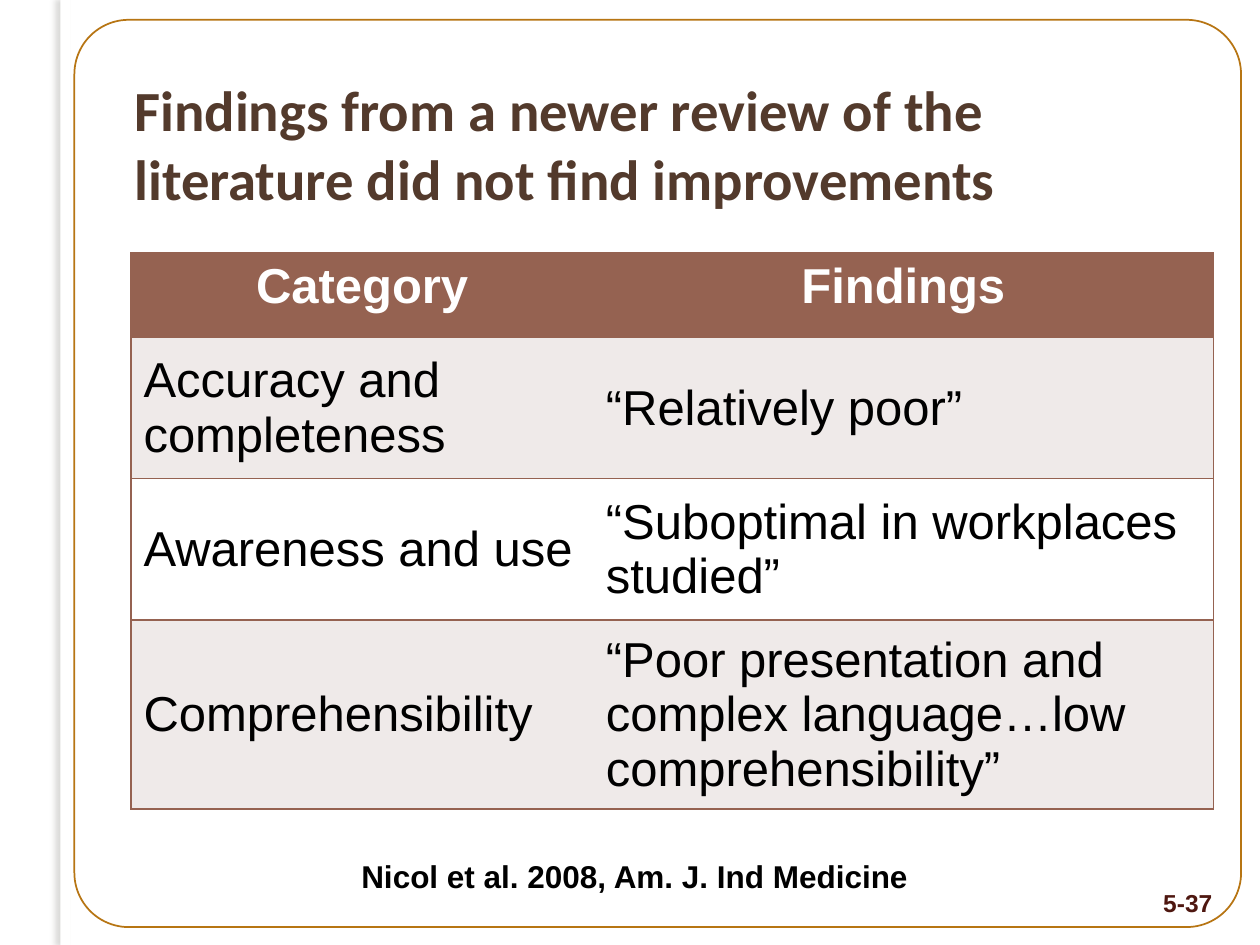
import pptx
import pptx.dml.color
import pptx.enum.shapes
import pptx.enum.text
import pptx.oxml
import pptx.oxml.ns
import pptx.util
from lxml import etree

Cm = pptx.util.Cm
Pt = pptx.util.Pt
RGBColor = pptx.dml.color.RGBColor
ALIGN = pptx.enum.text.PP_ALIGN
ANCHOR = pptx.enum.text.MSO_ANCHOR
SHAPE = pptx.enum.shapes.MSO_SHAPE
qn = pptx.oxml.ns.qn

WHITE = RGBColor(0xFF, 0xFF, 0xFF)
BLACK = RGBColor(0, 0, 0)
GOLD = RGBColor(0xB7, 0x75, 0x13)
BROWN = RGBColor(0x53, 0x3A, 0x2C)
MAROON = RGBColor(0x4E, 0x17, 0x10)
RUST = RGBColor(0x95, 0x62, 0x51)
PALE = RGBColor(0xEF, 0xEA, 0xE9)
SHADOW = RGBColor(0x74, 0x72, 0x6D)

FINDINGS = [
    ("Category", "Findings"),
    ("Accuracy and completeness", "“Relatively poor”"),
    ("Awareness and use", "“Suboptimal in workplaces studied”"),
    ("Comprehensibility", "“Poor presentation and complex language…low comprehensibility”"),
]


def write_text(frame, text, size=28, font="Arial", color=BLACK, bold=False, align=ALIGN.LEFT):
    """Fill a text frame with one formatted paragraph."""
    paragraph = frame.paragraphs[0]
    paragraph.alignment = align
    run = paragraph.add_run()
    run.text = text
    run.font.size = Pt(size)
    run.font.name = font
    run.font.bold = bold
    run.font.color.rgb = color


class SlideBuilder:
    """Holds the current slide and the style of its elements."""

    border_width = Pt(1)

    def __init__(self, slide):
        self.slide = slide

    def shape(self, kind, left, top, width, height, fill=None, line=None):
        shape = self.slide.shapes.add_shape(kind, Cm(left), Cm(top), Cm(width), Cm(height))
        shape.shadow.inherit = False
        if fill is None:
            shape.fill.background()
        else:
            shape.fill.solid()
            shape.fill.fore_color.rgb = fill
        if line is None:
            shape.line.fill.background()
        else:
            shape.line.color.rgb = line
            shape.line.width = self.border_width
        return shape

    def outer_shadow(self, shape, color, blur, distance, angle, opacity):
        effects = shape._element.spPr.find(qn("a:effectLst"))
        shadow = etree.SubElement(
            effects, qn("a:outerShdw"), blurRad=str(Pt(blur)), dist=str(Pt(distance)),
            dir=str(angle * 60000), rotWithShape="0")
        fill = etree.SubElement(shadow, qn("a:srgbClr"), val=str(color))
        etree.SubElement(fill, qn("a:alpha"), val=str(opacity * 1000))

    def text(self, text, left, top, width, height, anchor=ANCHOR.TOP, **style):
        box = self.slide.shapes.add_textbox(Cm(left), Cm(top), Cm(width), Cm(height))
        box.text_frame.word_wrap = True
        box.text_frame.vertical_anchor = anchor
        write_text(box.text_frame, text, **style)

    def borders(self, cell, visible):
        properties = cell._tc.get_or_add_tcPr()
        for side in "LRTB":
            line = etree.SubElement(properties, qn("a:ln" + side), w=str(self.border_width))
            if side in visible:
                fill = etree.SubElement(line, qn("a:solidFill"))
                etree.SubElement(fill, qn("a:srgbClr"), val=str(RUST))
            else:
                etree.SubElement(line, qn("a:noFill"))

    def table(self, rows, left, top, widths, heights):
        table = self.slide.shapes.add_table(
            len(rows), len(widths), Cm(left), Cm(top), Cm(sum(widths)), Cm(sum(heights))).table
        for column, width in zip(table.columns, widths):
            column.width = Cm(width)
        for row_index, (texts, height) in enumerate(zip(rows, heights)):
            table.rows[row_index].height = Cm(height)
            header = row_index == 0
            fill = RUST if header else (PALE if row_index % 2 else WHITE)
            for column_index, text in enumerate(texts):
                cell = table.cell(row_index, column_index)
                self.borders(cell, "LTB" if column_index == 0 else "RTB")
                cell.fill.solid()
                cell.fill.fore_color.rgb = fill
                cell.vertical_anchor = ANCHOR.TOP if header else ANCHOR.MIDDLE
                write_text(cell.text_frame, text, bold=header,
                           color=WHITE if header else BLACK,
                           align=ALIGN.CENTER if header else ALIGN.LEFT)


def main():
    presentation = pptx.Presentation()
    presentation.slide_width = Cm(25.4)
    presentation.slide_height = Cm(19.05)
    builder = SlideBuilder(presentation.slides.add_slide(presentation.slide_layouts[6]))

    # Side strip and rounded frame
    strip = builder.shape(SHAPE.RECTANGLE, 1.22, 0, 0.2, 19.05, fill=WHITE)
    builder.outer_shadow(strip, SHADOW, blur=3, distance=3, angle=180, opacity=25)
    frame = builder.shape(SHAPE.ROUNDED_RECTANGLE, 1.5, 0.4, 23.52, 18.29, line=GOLD)
    frame.adjustments[0] = 0.06

    # Slide number and title
    builder.text("5-37", 22.91, 17.78, 1.78, 0.74, size=14, color=MAROON, bold=True,
                 align=ALIGN.RIGHT)
    builder.text("Findings from a newer review of the literature did not find improvements",
                 2.46, 1.3, 21.59, 3.18, anchor=ANCHOR.MIDDLE, size=32.4, font="Calibri",
                 color=BROWN, bold=True)

    # Findings table and its citation
    builder.table(FINDINGS, 2.64, 5.1, widths=[9.32, 12.5], heights=[1.7, 2.85, 2.85, 3.55])
    builder.text("Nicol et al. 2008, Am. J. Ind Medicine", 2.9, 17.15, 19.79, 1.02,
                 size=18, bold=True, align=ALIGN.CENTER)

    presentation.save("out.pptx")


if __name__ == "__main__":
    main()
